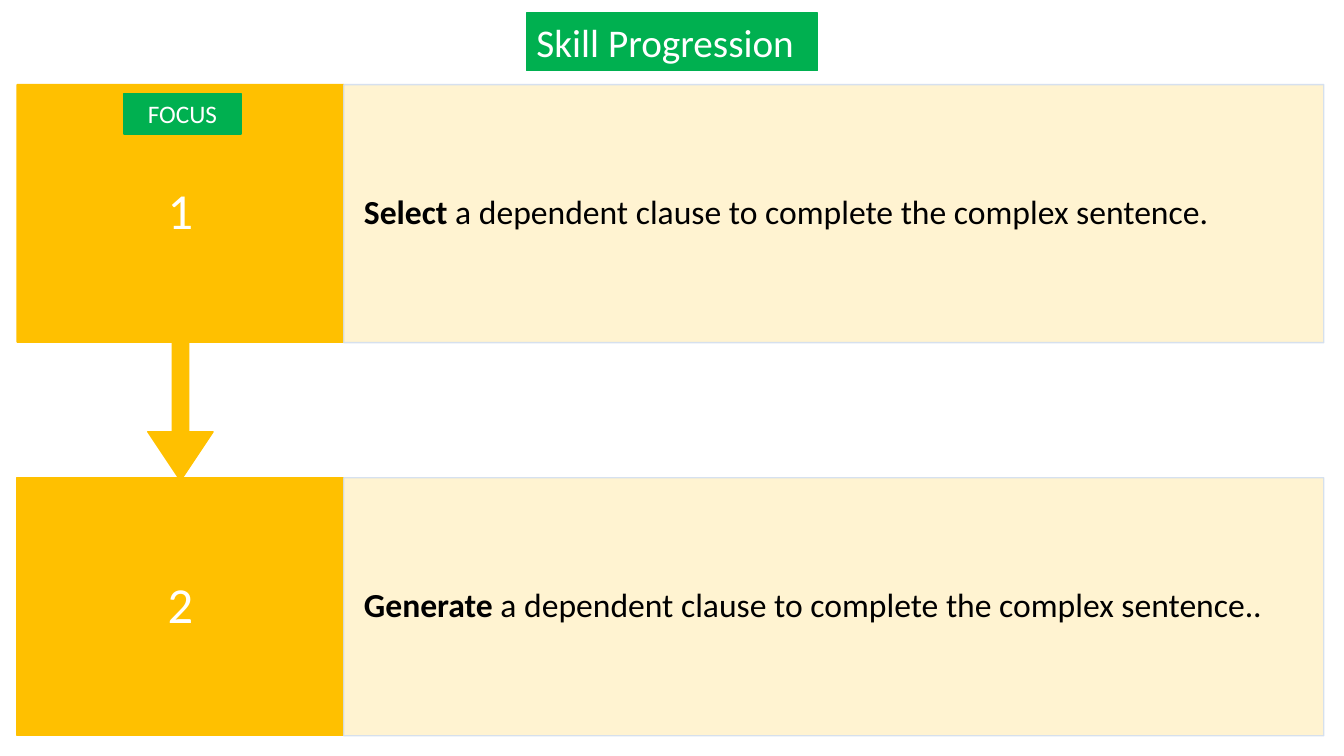
from lxml.etree import SubElement
from pptx import Presentation
from pptx.dml.color import RGBColor
from pptx.enum.shapes import MSO_SHAPE as Shape
from pptx.enum.text import MSO_ANCHOR as Anchor, PP_ALIGN as Align
from pptx.oxml.ns import qn
from pptx.util import Emu, Pt

GOLD, CREAM, PALE_BLUE, GREEN = "FFC000", "FFF2CC", "D2DEEF", "00B050"
WHITE, BLACK = "FFFFFF", "000000"
LEFT, TOP, PITCH = 17, 84, 390
NUMBER_WIDTH, TEXT_WIDTH, STEP_HEIGHT, CALLOUT_HEIGHT = 324, 972, 256, 393
STEPS = [
    ("Select", " a dependent clause to complete the complex sentence."),
    ("Generate", " a dependent clause to complete the complex sentence.."),
]


def px(length):
    return Emu(length * 9144)


def color(value):
    return RGBColor.from_string(value)


def paint(shape, fill, line, opacity=100):
    shape.fill.solid()
    shape.fill.fore_color.rgb = color(fill)
    shape.line.color.rgb = color(line)
    shape.line.width = Pt(1)
    if opacity < 100:
        for tint in shape._element.spPr.iter(qn("a:srgbClr")):
            SubElement(tint, qn("a:alpha"), val=str(opacity * 1000))


def write(shape, *texts, size, ink=WHITE, align=Align.CENTER, anchor=Anchor.MIDDLE,
          inset=(10, 5), spacing=1.0, bold_first=False):
    frame = shape.text_frame
    frame.word_wrap = True
    frame.vertical_anchor = anchor
    frame.margin_left = frame.margin_right = px(inset[0])
    frame.margin_top = frame.margin_bottom = px(inset[1])
    paragraph = frame.paragraphs[0]
    paragraph.alignment = align
    paragraph.line_spacing = spacing
    for index, text in enumerate(texts):
        run = paragraph.add_run()
        run.text = text
        run.font.name = "Calibri"
        run.font.size = Pt(size)
        run.font.bold = bold_first and index == 0
        run.font.color.rgb = color(ink)


def add_box(slide, kind, left, top, width, height, fill, line, opacity=100):
    shape = slide.shapes.add_shape(kind, px(left), px(top), px(width), px(height))
    shape.shadow.inherit = False
    paint(shape, fill, line, opacity)
    return shape


def add_title(slide, text):
    title = slide.shapes.title
    title.left, title.top, title.width, title.height = map(px, (522, 13, 289, 57))
    paint(title, GREEN, GREEN)
    write(title, text, size=28, align=Align.LEFT, anchor=Anchor.TOP)


def add_step(slide, index, verb, rest, leads_on):
    top = TOP + index * PITCH
    kind = Shape.DOWN_ARROW_CALLOUT if leads_on else Shape.RECTANGLE
    height = CALLOUT_HEIGHT if leads_on else STEP_HEIGHT
    number = add_box(slide, kind, LEFT, top, NUMBER_WIDTH, height, GOLD, GOLD)
    if leads_on:
        for position, value in enumerate((0.05, 0.1, 0.15, 0.65)):
            number.adjustments[position] = value
    write(number, str(index + 1), size=36, inset=(23, 28), spacing=0.9)

    description = add_box(slide, Shape.RECTANGLE, LEFT + NUMBER_WIDTH, top,
                          TEXT_WIDTH, STEP_HEIGHT, CREAM, PALE_BLUE, opacity=90)
    write(description, verb, rest, size=24, ink=BLACK, align=Align.LEFT,
          inset=(20, 33), spacing=0.9, bold_first=True)


def add_focus_label(slide):
    label = add_box(slide, Shape.RECTANGLE, 123, 93, 116, 40, GREEN, GREEN)
    write(label, "FOCUS", size=18, anchor=Anchor.TOP)


def main():
    presentation = Presentation()
    presentation.slide_width, presentation.slide_height = px(1333), px(750)
    slide = presentation.slides.add_slide(presentation.slide_layouts[5])
    add_title(slide, "Skill Progression")
    for index, (verb, rest) in enumerate(STEPS):
        add_step(slide, index, verb, rest, leads_on=index < len(STEPS) - 1)
    add_focus_label(slide)
    presentation.save("out.pptx")


if __name__ == "__main__":
    main()
